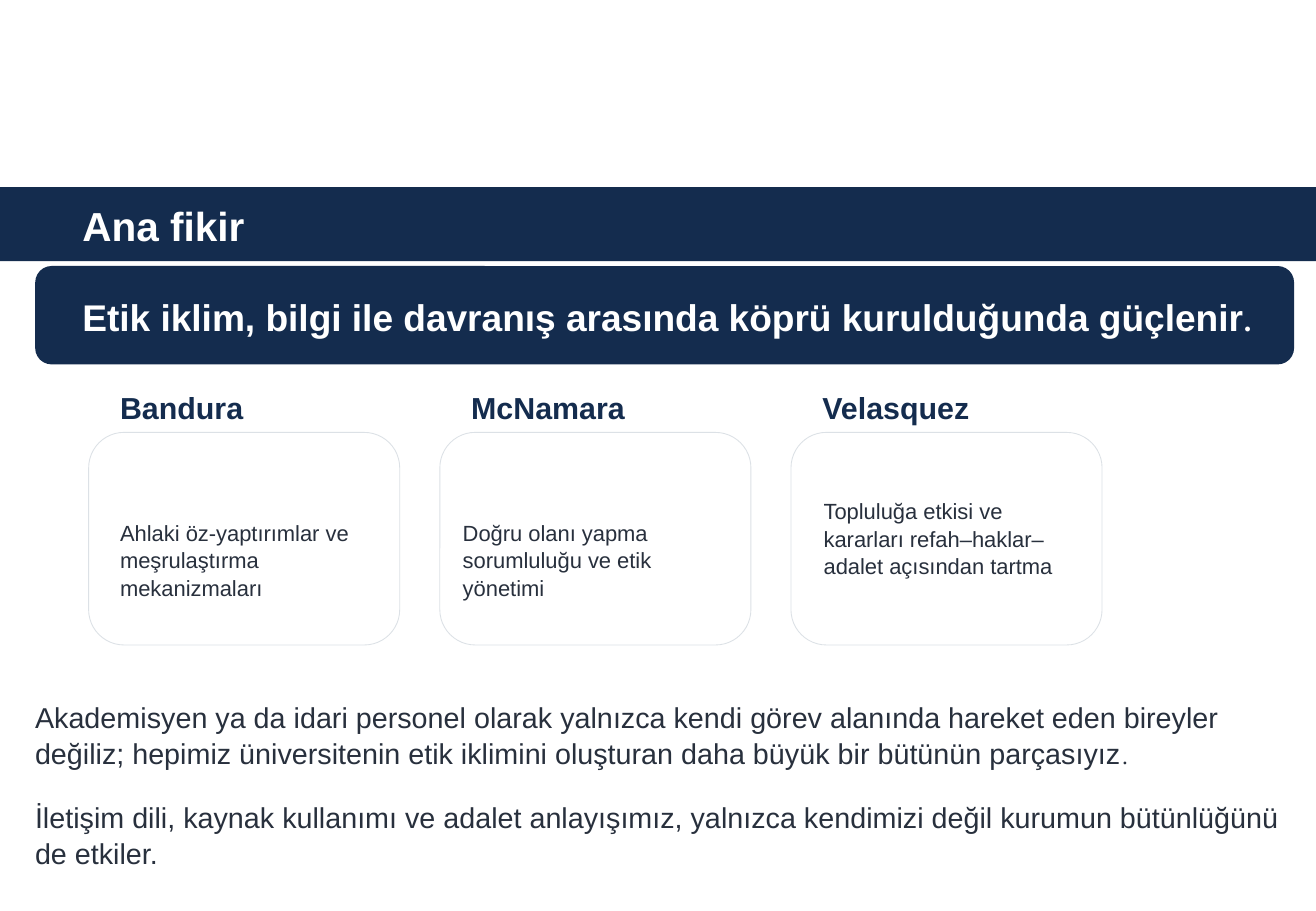
from pptx import Presentation
from pptx.dml.color import RGBColor
from pptx.enum.shapes import MSO_SHAPE as Shape
from pptx.util import Inches, Pt

COLORS = {"navy": "142C4E", "white": "FFFFFF", "border": "DCE1E6", "ink": "28303D"}
CARD_LEFT, CARD_PITCH, LABEL_INDENT = 0.73, 2.89, 0.16
CARDS = [
    ("Bandura", "Ahlaki öz-yaptırımlar ve meşrulaştırma mekanizmaları", 0.89, 4.22),
    ("McNamara", "Doğru olanı yapma sorumluluğu ve etik yönetimi", 3.71, 4.22),
    ("Velasquez", "Topluluğa etkisi ve kararları refah–haklar–adalet açısından tartma",
     6.68, 4.04),
]
CLOSING = [
    [("Akademisyen ya da idari personel olarak yalnızca kendi görev alanında hareket "
      "eden bireyler değiliz; hepimiz üniversitenin etik iklimini oluşturan daha büyük "
      "bir bütünün parçasıyız", 17, "Arial"), (".", 13.8, "Times New Roman")],
    [("İletişim dili, kaynak kullanımı ve adalet anlayışımız, yalnızca kendimizi değil "
      "kurumun bütünlüğünü de etkiler.", 17, "Arial")],
]


def rgb(name):
    """Return the named colour."""
    return RGBColor.from_string(COLORS[name])


def add_panel(slide, kind, box, fill, line=None):
    """Add a filled shape with an optional thin outline."""
    shape = slide.shapes.add_shape(kind, *map(Inches, box))
    shape.shadow.inherit = False
    shape.fill.solid()
    shape.fill.fore_color.rgb = rgb(fill)
    if line:
        shape.line.color.rgb = rgb(line)
        shape.line.width = Pt(0.5)
    else:
        shape.line.fill.background()


def add_text(slide, box, paragraphs, color, bold=False, gap=0):
    """Add a text box from paragraphs of (text, size, font) runs."""
    frame = slide.shapes.add_textbox(*map(Inches, box)).text_frame
    frame.word_wrap = True
    for index, runs in enumerate(paragraphs):
        paragraph = frame.add_paragraph() if index else frame.paragraphs[0]
        paragraph.line_spacing = 1.04
        if index:
            paragraph.space_before = Pt(gap)
        for text, size, font in runs:
            run = paragraph.add_run()
            run.text = text
            run.font.size = Pt(size)
            run.font.name = font
            run.font.bold = bold
            run.font.color.rgb = rgb(color)


def add_card(slide, index, name, body, body_left, body_top):
    """Add one outlined card with its heading and body."""
    left = CARD_LEFT + index * CARD_PITCH
    add_panel(slide, Shape.ROUNDED_RECTANGLE, (left, 3.56, 2.56, 1.75), "white", "border")
    add_text(slide, (left + LABEL_INDENT, 3.14, 2.2, 0.4), [[(name, 18, "Arial")]],
             "navy", bold=True)
    add_text(slide, (body_left, body_top, 2.23, 0.75), [[(body, 13, "Arial")]], "ink")


def main():
    """Build and save the slide."""
    presentation = Presentation()
    presentation.slide_width = Inches(10.83)
    presentation.slide_height = Inches(7.5)
    slide = presentation.slides.add_slide(presentation.slide_layouts[6])

    add_panel(slide, Shape.RECTANGLE, (0, 1.54, 10.83, 0.61), "navy")
    add_text(slide, (0.58, 1.59, 3, 0.5), [[("Ana fikir", 24, "Arial")]],
             "white", bold=True)
    add_panel(slide, Shape.ROUNDED_RECTANGLE, (0.29, 2.19, 10.36, 0.81), "navy")
    message = [("Etik iklim, bilgi ile davranış arasında köprü kurulduğunda güçlenir",
                22, "Arial"), (".", 17.9, "Times New Roman")]
    add_text(slide, (0.58, 2.36, 10.1, 0.47), [message], "white", bold=True)
    for index, card in enumerate(CARDS):
        add_card(slide, index, *card)
    add_text(slide, (0.19, 5.7, 10.53, 1.48), CLOSING, "ink", gap=17)
    presentation.save("out.pptx")


if __name__ == "__main__":
    main()
